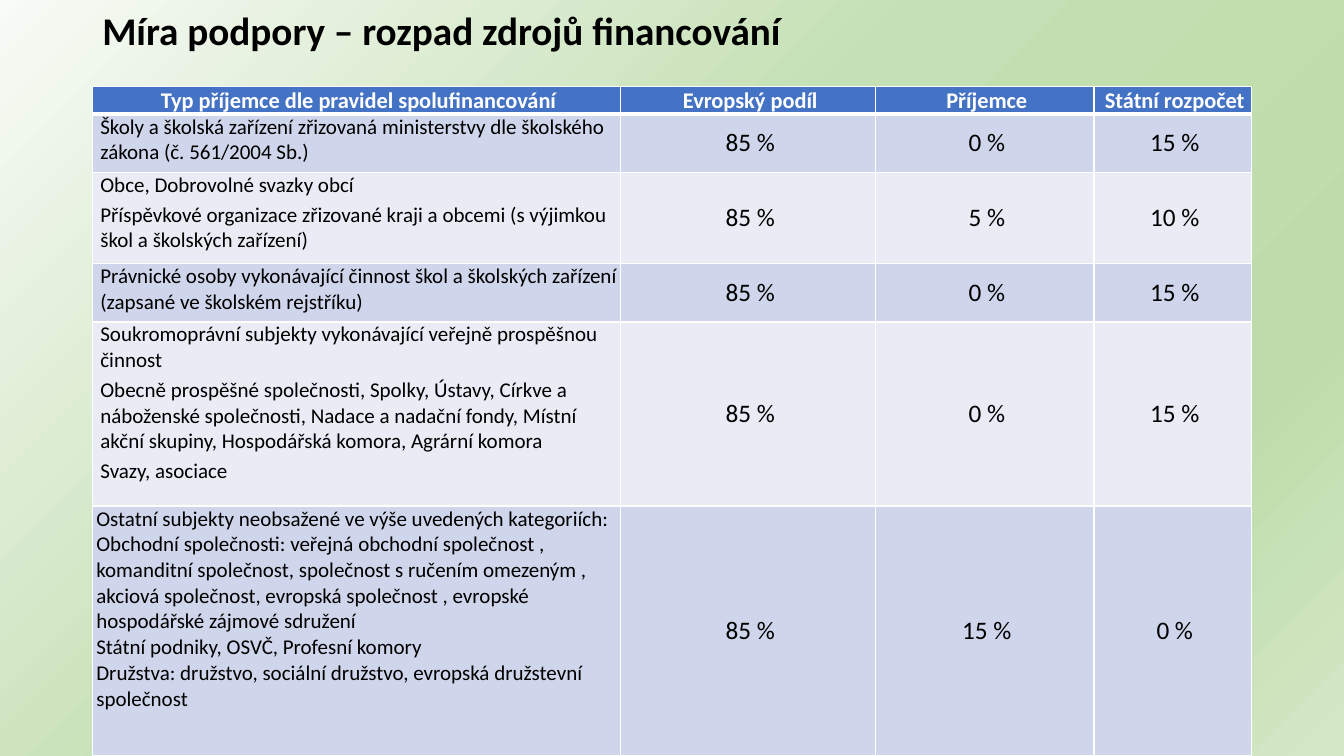
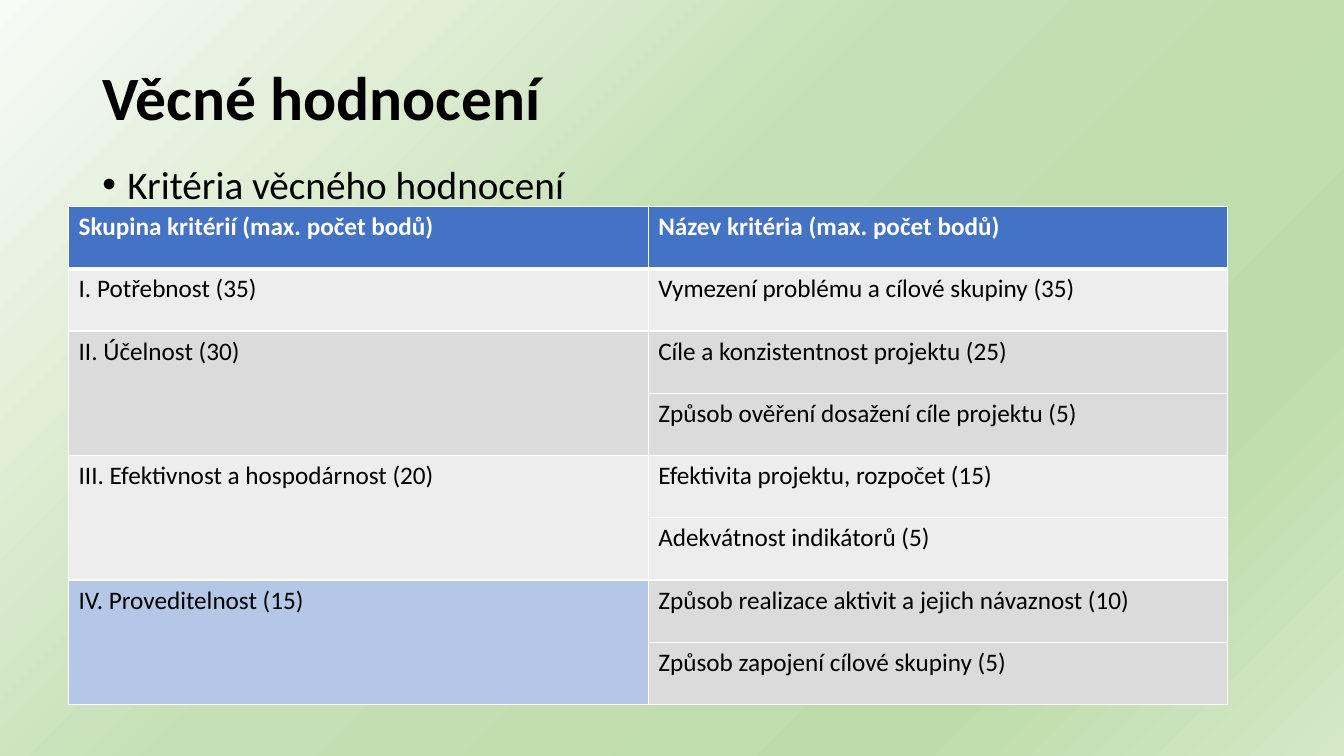
from copy import deepcopy
from lxml.etree import SubElement
from pptx import Presentation
from pptx.dml.color import RGBColor
from pptx.enum.text import MSO_ANCHOR, PP_ALIGN
from pptx.oxml.ns import qn
from pptx.util import Pt

FONT = "Calibri"
HUES = {
    "text": "000000", "white": "FFFFFF", "head": "4472C4",
    "blue": "CFD5EA", "pale": "E9EBF5", "mark": "B4C7E7",
    "light": "EDEDED", "gray": "DBDBDB",
}
STOPS = [(0, "F8FBF6"), (0.44, "C5E0B4"), (0.79, "BEDCAA"), (1, "D4E8C6")]
LEFT, WIDTH = 66, 828
PAD = 2.85

SHARES = [
    (19.5, ["Typ příjemce dle pravidel spolufinancování"],
     ["Evropský podíl", "Příjemce", "Státní rozpočet"]),
    (41.5, ["Školy a školská zařízení zřizovaná ministerstvy dle školského zákona (č. 561/2004 Sb.)"],
     ["85 %", "0 %", "15 %"]),
    (65.5, ["Obce, Dobrovolné svazky obcí",
            "Příspěvkové organizace zřizované kraji a obcemi (s výjimkou škol a školských zařízení)"],
     ["85 %", "5 %", "10 %"]),
    (41.5, ["Právnické osoby vykonávající činnost škol a školských zařízení (zapsané ve školském rejstříku)"],
     ["85 %", "0 %", "15 %"]),
    (131.5, ["Soukromoprávní subjekty vykonávající veřejně prospěšnou činnost",
             "Obecně prospěšné společnosti, Spolky, Ústavy, Církve a náboženské společnosti, "
             "Nadace a nadační fondy, Místní akční skupiny, Hospodářská komora, Agrární komora",
             "Svazy, asociace"],
     ["85 %", "0 %", "15 %"]),
    (178.5, ["Ostatní subjekty neobsažené ve výše uvedených kategoriích:",
             "Obchodní společnosti: veřejná obchodní společnost , komanditní společnost, "
             "společnost s ručením omezeným , akciová společnost, evropská společnost , "
             "evropské hospodářské zájmové sdružení",
             "Státní podniky, OSVČ, Profesní komory",
             "Družstva: družstvo, sociální družstvo, evropská družstevní společnost"],
     ["85 %", "15 %", "0 %"]),
]

GROUPS = [
    ("Skupina kritérií (max. počet bodů)", "head", "head",
     ["Název kritéria (max. počet bodů)"]),
    ("I. Potřebnost (35)", "light", "light",
     ["Vymezení problému a cílové skupiny (35)"]),
    ("II. Účelnost (30)", "gray", "gray",
     ["Cíle a konzistentnost projektu (25)", "Způsob ověření dosažení cíle projektu (5)"]),
    ("III. Efektivnost a hospodárnost (20)", "light", "light",
     ["Efektivita projektu, rozpočet (15)", "Adekvátnost indikátorů (5)"]),
    ("IV. Proveditelnost (15)", "mark", "gray",
     ["Způsob realizace aktivit a jejich návaznost (10)", "Způsob zapojení cílové skupiny (5)"]),
]


def rgb(name):
    """Return the named colour."""
    return RGBColor.from_string(HUES[name])


def write(frame, lines, size, hue="text", bold=False, align=PP_ALIGN.LEFT,
          before=0, indent=0, space=1.0):
    """Write the lines as paragraphs of one style."""
    for i, line in enumerate(lines):
        para = frame.add_paragraph() if i else frame.paragraphs[0]
        para.text = line
        para.alignment = align
        para.space_before = Pt(before)
        para.line_spacing = space
        font = para.font
        font.name, font.size, font.bold = FONT, Pt(size), bold
        font.color.rgb = rgb(hue)
        if indent:
            props = para._p.get_or_add_pPr()
            props.set("marL", str(Pt(indent)))
            props.set("indent", "0")


def add_text(slide, box, line, size, **style):
    """Add a wrapped text box and return its frame."""
    frame = slide.shapes.add_textbox(*map(Pt, box)).text_frame
    frame.word_wrap = True
    write(frame, [line], size, space=0.9, **style)
    return frame


def add_title(slide, box, line, size):
    """Add the bold title, centred in the height of its box."""
    frame = add_text(slide, box, line, size, bold=True)
    frame.vertical_anchor = MSO_ANCHOR.MIDDLE


def add_bullet(slide, box, line):
    """Add a text box with one bulleted line."""
    frame = add_text(slide, box, line, 28, before=10)
    props = frame.paragraphs[0]._p.get_or_add_pPr()
    props.set("marL", str(Pt(18)))
    props.set("indent", str(-Pt(18)))
    SubElement(props, qn("a:buFont"), typeface="Arial")
    SubElement(props, qn("a:buChar"), char="•")


def add_grid(slide, box, cols, rows):
    """Add a table with the given column widths and row heights."""
    grid = slide.shapes.add_table(len(rows), len(cols), *map(Pt, box)).table
    grid.horz_banding = False
    for col, width in zip(grid.columns, cols):
        col.width = Pt(width)
    for row, height in zip(grid.rows, rows):
        row.height = Pt(height)
    return grid


def paint(grid, row, col, hue):
    """Fill a cell, rule its sides in white and return it."""
    cell = grid.cell(row, col)
    props = cell._tc.get_or_add_tcPr()
    for side in "LRTB":
        thick = (row, side) in ((0, "B"), (1, "T"))
        line = SubElement(props, qn("a:ln" + side), w=str(Pt(3 if thick else 1)))
        fill = SubElement(line, qn("a:solidFill"))
        SubElement(fill, qn("a:srgbClr"), val=HUES["white"])
    cell.fill.solid()
    cell.fill.fore_color.rgb = rgb(hue)
    return cell


def add_shares(slide, box):
    """Add the table of funding shares by type of recipient."""
    cols = [377.5, 182, 156, 112.5]
    grid = add_grid(slide, box, cols, [height for height, _, _ in SHARES])
    last = len(SHARES) - 1
    for r, (_, kinds, parts) in enumerate(SHARES):
        hue = "head" if r == 0 else "blue" if r % 2 else "pale"
        for c, lines in enumerate([kinds] + [[part] for part in parts]):
            cell = paint(grid, r, c, hue)
            cell.margin_left = cell.margin_right = Pt(PAD)
            cell.margin_top = cell.margin_bottom = Pt(0)
            style = {"before": 3, "indent": PAD}
            if r == 0 or c:
                style["align"] = PP_ALIGN.CENTER
            elif r == last:
                style = {}
            if r and c:
                cell.vertical_anchor = MSO_ANCHOR.MIDDLE
            if r == 0:
                style.update(hue="white", bold=True)
            size = 16 if r == 0 else 18 if c else 15
            write(cell.text_frame, lines, size, **style)


def add_groups(slide, box):
    """Add the table of criteria, one merged cell for each group."""
    count = sum(len(items) for *_, items in GROUPS)
    grid = add_grid(slide, box, [box[2] / 2] * 2, [box[3] / count] * count)
    row = 0
    for name, mark, hue, items in GROUPS:
        style = {"hue": "white", "bold": True} if row == 0 else {}
        first = row
        for item in items:
            paint(grid, row, 0, mark)
            write(paint(grid, row, 1, hue).text_frame, [item], 18, **style)
            row += 1
        cell = grid.cell(first, 0)
        write(cell.text_frame, [name], 18, **style)
        if len(items) > 1:
            cell.merge(grid.cell(row - 1, 0))


def add_slide(deck):
    """Add a blank slide with the green gradient."""
    slide = deck.slides.add_slide(deck.slide_layouts[6])
    fill = slide.background.fill
    fill.gradient()
    fill.gradient_angle = 315
    stops = next(slide.element.iter(qn("a:gsLst")))
    while len(stops) < len(STOPS):
        stops.append(deepcopy(stops[-1]))
    for stop, (place, hue) in zip(fill.gradient_stops, STOPS):
        stop.position = place
        stop.color.rgb = RGBColor.from_string(hue)
    return slide


def support(deck):
    """Build the slide on the sources of funding."""
    slide = add_slide(deck)
    add_title(slide, (LEFT, 0, WIDTH, 47), "Míra podpory – rozpad zdrojů financování", 28)
    add_shares(slide, (LEFT, 62, WIDTH, 478))


def rating(deck):
    """Build the slide on the rating criteria."""
    slide = add_slide(deck)
    add_title(slide, (LEFT, 28.75, WIDTH, 86), "Věcné hodnocení", 44)
    add_bullet(slide, (LEFT, 114.75, WIDTH, 342.5), "Kritéria věcného hodnocení")
    add_groups(slide, (49, 147.5, WIDTH, 356))


def main():
    """Build and save the deck."""
    deck = Presentation()
    deck.slide_width, deck.slide_height = Pt(960), Pt(540)
    support(deck)
    rating(deck)
    deck.save("out.pptx")


if __name__ == "__main__":
    main()
